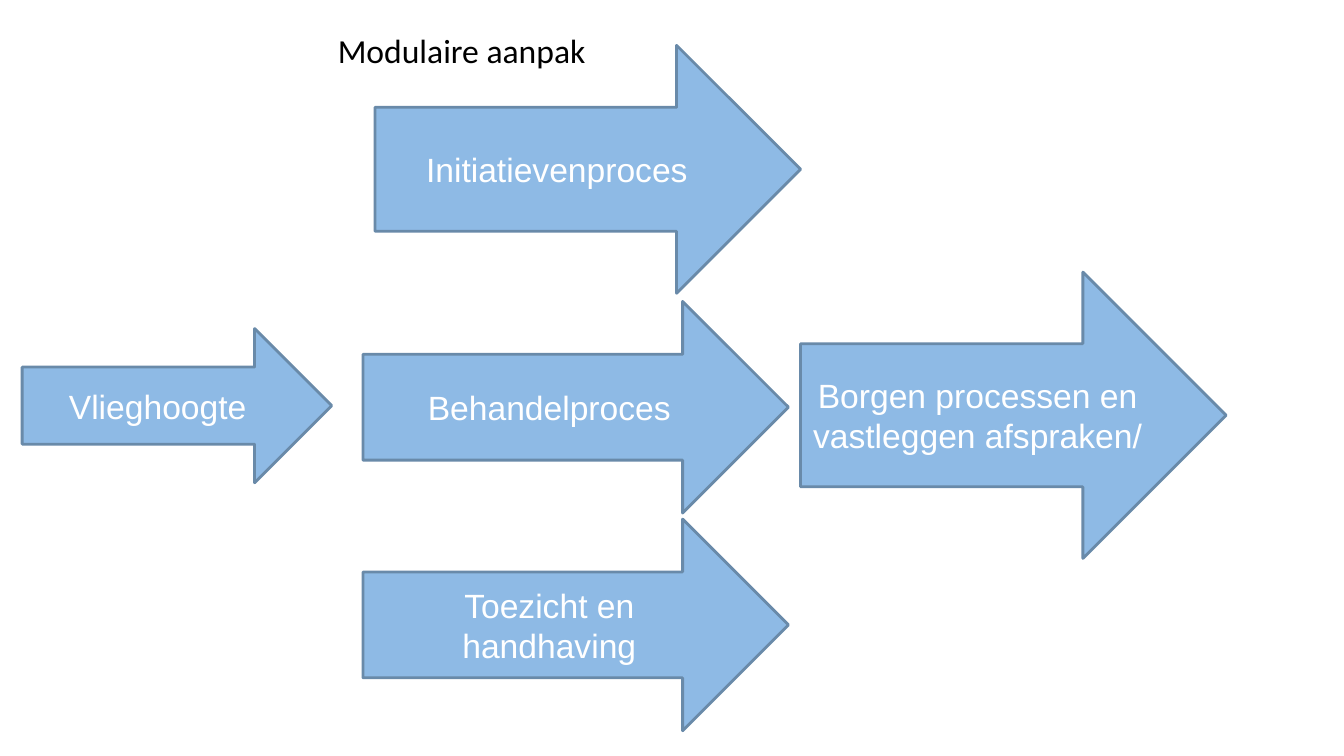
from dataclasses import dataclass

from pptx import Presentation
from pptx.dml.color import RGBColor
from pptx.enum.shapes import MSO_SHAPE
from pptx.enum.text import MSO_ANCHOR, MSO_AUTO_SIZE, PP_ALIGN
from pptx.util import Inches, Pt


@dataclass(frozen=True)
class Theme:
    arrow_fill: RGBColor = RGBColor(0x8E, 0xBA, 0xE5)
    arrow_line: RGBColor = RGBColor(0x69, 0x8A, 0xA9)
    arrow_text: RGBColor = RGBColor(0xFF, 0xFF, 0xFF)
    title_text: RGBColor = RGBColor(0x00, 0x00, 0x00)
    arrow_font: str = "Arial"
    title_font: str = "Calibri"
    text_size: Pt = Pt(24)
    line_width: Pt = Pt(2)


THEME = Theme()
TITLE_ONLY = 5
MODULE_WIDTH = 4.22

# Label, left, top, width, height in inches
ARROWS = [
    ("Vlieghoogte", 0.22, 3.26, 3.07, 1.53),
    ("Initiatievenproces", 3.72, 0.45, MODULE_WIDTH, 2.46),
    ("Behandelproces", 3.6, 2.99, MODULE_WIDTH, 2.1),
    ("Toezicht en handhaving", 3.6, 5.15, MODULE_WIDTH, 2.1),
    ("Borgen processen en vastleggen afspraken/", 7.94, 2.7, MODULE_WIDTH, 2.84),
]


def write_text(box, text, font, color, align, anchor):
    frame = box.text_frame
    frame.word_wrap = True
    frame.vertical_anchor = anchor
    para = frame.paragraphs[0]
    para.alignment = align
    span = para.add_run()
    span.text = text
    for name, value in {"name": font, "size": THEME.text_size}.items():
        setattr(span.font, name, value)
    span.font.color.rgb = color


def set_title(page, text):
    title = page.shapes.title
    place = {"left": 3.25, "top": 0.25, "width": 7.93, "height": 0.5}
    for name, value in place.items():
        setattr(title, name, Inches(value))
    write_text(title, text, THEME.title_font, THEME.title_text,
               PP_ALIGN.LEFT, MSO_ANCHOR.TOP)
    title.text_frame.auto_size = MSO_AUTO_SIZE.SHAPE_TO_FIT_TEXT


def add_arrow(page, label, *place):
    arrow = page.shapes.add_shape(MSO_SHAPE.RIGHT_ARROW, *map(Inches, place))
    arrow.shadow.inherit = False
    arrow.fill.solid()
    arrow.fill.fore_color.rgb = THEME.arrow_fill
    arrow.line.color.rgb = THEME.arrow_line
    arrow.line.width = THEME.line_width
    write_text(arrow, label, THEME.arrow_font, THEME.arrow_text,
               PP_ALIGN.CENTER, MSO_ANCHOR.MIDDLE)


def main():
    deck = Presentation()
    deck.slide_width, deck.slide_height = Inches(13.33), Inches(7.5)
    page = deck.slides.add_slide(deck.slide_layouts[TITLE_ONLY])
    set_title(page, "Modulaire aanpak")
    for arrow in ARROWS:
        add_arrow(page, *arrow)
    deck.save("out.pptx")


if __name__ == "__main__":
    main()
